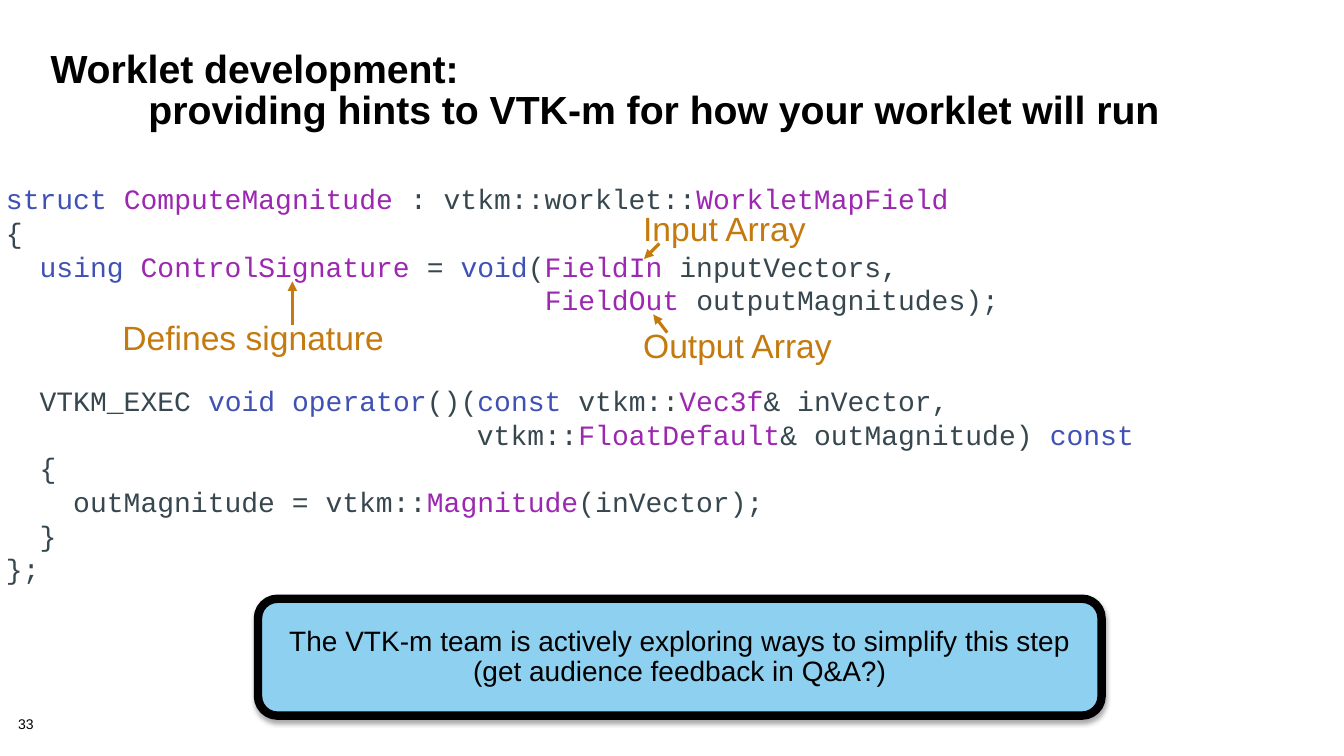
from lxml import etree
from pptx import Presentation
from pptx.dml.color import RGBColor
from pptx.enum.shapes import MSO_CONNECTOR, MSO_SHAPE
from pptx.enum.text import MSO_ANCHOR, PP_ALIGN
from pptx.oxml.ns import qn
from pptx.util import Pt

TOP, MIDDLE = MSO_ANCHOR.TOP, MSO_ANCHOR.MIDDLE
LEFT, CENTER = PP_ALIGN.LEFT, PP_ALIGN.CENTER
STRAIGHT, ROUNDED = MSO_CONNECTOR.STRAIGHT, MSO_SHAPE.ROUNDED_RECTANGLE

COLOURS = {"keyword": "3F51B5", "type": "9C27B0", "plain": "37474F",
           "note": "C47A0E", "text": "000000", "panel": "8ED0EF"}

# Content: a line of text is a list of (wording, colour) runs
TITLE = ["Worklet development:",
         "providing hints to VTK-m for how your worklet will run"]
TITLE_INDENT = 70
SIGNATURE_CODE = [
    [("struct ", "keyword"), ("ComputeMagnitude", "type"),
     (" : vtkm::worklet::", "plain"), ("WorkletMapField", "type")],
    [("{", "plain")],
    [("  ", "plain"), ("using ", "keyword"), ("ControlSignature", "type"),
     (" = ", "plain"), ("void", "keyword"), ("(", "plain"),
     ("FieldIn ", "type"), ("inputVectors,", "plain")],
    [("                                ", "plain"), ("FieldOut ", "type"),
     ("outputMagnitudes);", "plain")],
]
OPERATOR_CODE = [
    [("  VTKM_EXEC ", "plain"), ("void operator", "keyword"), ("()(", "plain"),
     ("const ", "keyword"), ("vtkm::", "plain"), ("Vec3f", "type"),
     ("& inVector,", "plain")],
    [("                            vtkm::", "plain"), ("FloatDefault", "type"),
     ("& outMagnitude) ", "plain"), ("const", "keyword")],
    [("  {", "plain")],
    [("    outMagnitude = vtkm::", "plain"), ("Magnitude", "type"),
     ("(inVector);", "plain")],
    [("  }", "plain")],
    [("};", "plain")],
]
CODE_PITCH = 24
# Wording, box (left, top, width, height), arrow start, arrow end
ANNOTATIONS = [
    ("Defines signature", (78, 222, 262, 41), (208.8, 232), (208.8, 201)),
    ("Input Array", (450, 144, 178, 41), (471, 174), (460, 185)),
    ("Output Array", (450, 228, 178, 41), (476.6, 237.6), (466.6, 224.6)),
]
FEEDBACK = ["The VTK-m team is actively exploring ways to simplify this step",
            "(get audience feedback in Q&A?)"]
PAGE = "33"


def colour(key):
    return RGBColor.from_string(COLOURS[key])


def write(shape, lines, size, margins, font="Arial", bold=False,
          anchor=MIDDLE, align=LEFT, spacing=0.9):
    frame = shape.text_frame
    side, edge = Pt(margins[0]), Pt(margins[1])
    frame_format = {"word_wrap": True, "vertical_anchor": anchor,
                    "margin_left": side, "margin_right": side,
                    "margin_top": edge, "margin_bottom": edge}
    for name, value in frame_format.items():
        setattr(frame, name, value)
    for number, runs in enumerate(lines):
        paragraph = frame.add_paragraph() if number else frame.paragraphs[0]
        paragraph.alignment, paragraph.line_spacing = align, spacing
        for wording, key in runs:
            run = paragraph.add_run()
            run.text = wording
            run_format = {"name": font, "size": Pt(size), "bold": bold}
            for name, value in run_format.items():
                setattr(run.font, name, value)
            run.font.color.rgb = colour(key)
    return frame.paragraphs


def plain_lines(lines, key="text"):
    return [[(wording, key)] for wording in lines]


def text_box(box):
    return slide.shapes.add_textbox(*map(Pt, box))


def arrow(start, end):
    line = slide.shapes.add_connector(STRAIGHT, *map(Pt, start + end))
    line.line.color.rgb, line.line.width = colour("note"), Pt(2.25)
    etree.SubElement(line.line._get_or_add_ln(), qn("a:tailEnd"), type="triangle")
    etree.SubElement(line._element.spPr, qn("a:effectLst"))


deck = Presentation()
deck.slide_width, deck.slide_height = Pt(960), Pt(540)
slide = deck.slides.add_slide(deck.slide_layouts[6])

# Page number
write(text_box((13, 512.6, 40, 12)), plain_lines([PAGE]), 10, (0, 0), anchor=TOP)

# Code, with a gap of two lines before the operator
code = write(text_box((0, 124.5, 820, 299)), SIGNATURE_CODE + OPERATOR_CODE, 20,
             (4.3, 4.3), font="Courier New", spacing=Pt(CODE_PITCH))
code[len(SIGNATURE_CODE)].space_before = Pt(2 * CODE_PITCH)

# Annotations with their arrows
for wording, box, start, end in ANNOTATIONS:
    write(text_box(box), plain_lines([wording], "note"), 24, (9.4, 7.2))
    arrow(start, end)

# Title, second line indented
title = write(text_box((29, 32.4, 896, 72)), plain_lines(TITLE), 28, (7.2, 3.6),
              bold=True, anchor=TOP, spacing=0.88)
title[1]._p.get_or_add_pPr().set("marL", str(Pt(TITLE_INDENT)))

# Feedback panel with a soft shadow below
panel = slide.shapes.add_shape(ROUNDED, *map(Pt, (184.3, 427.7, 602.6, 83.5)))
panel.fill.solid()
panel.fill.fore_color.rgb = colour("panel")
panel.line.color.rgb, panel.line.width = colour("text"), Pt(6)
panel.shadow.inherit = False
shadow = etree.SubElement(panel._element.spPr.find(qn("a:effectLst")),
                          qn("a:outerShdw"), blurRad=str(Pt(3.5)),
                          dist=str(Pt(2.2)), dir="5400000", rotWithShape="0")
tint = etree.SubElement(shadow, qn("a:srgbClr"), val=COLOURS["text"])
etree.SubElement(tint, qn("a:alpha"), val="32000")
write(panel, plain_lines(FEEDBACK), 20, (9.4, 5), align=CENTER)

deck.save("out.pptx")
